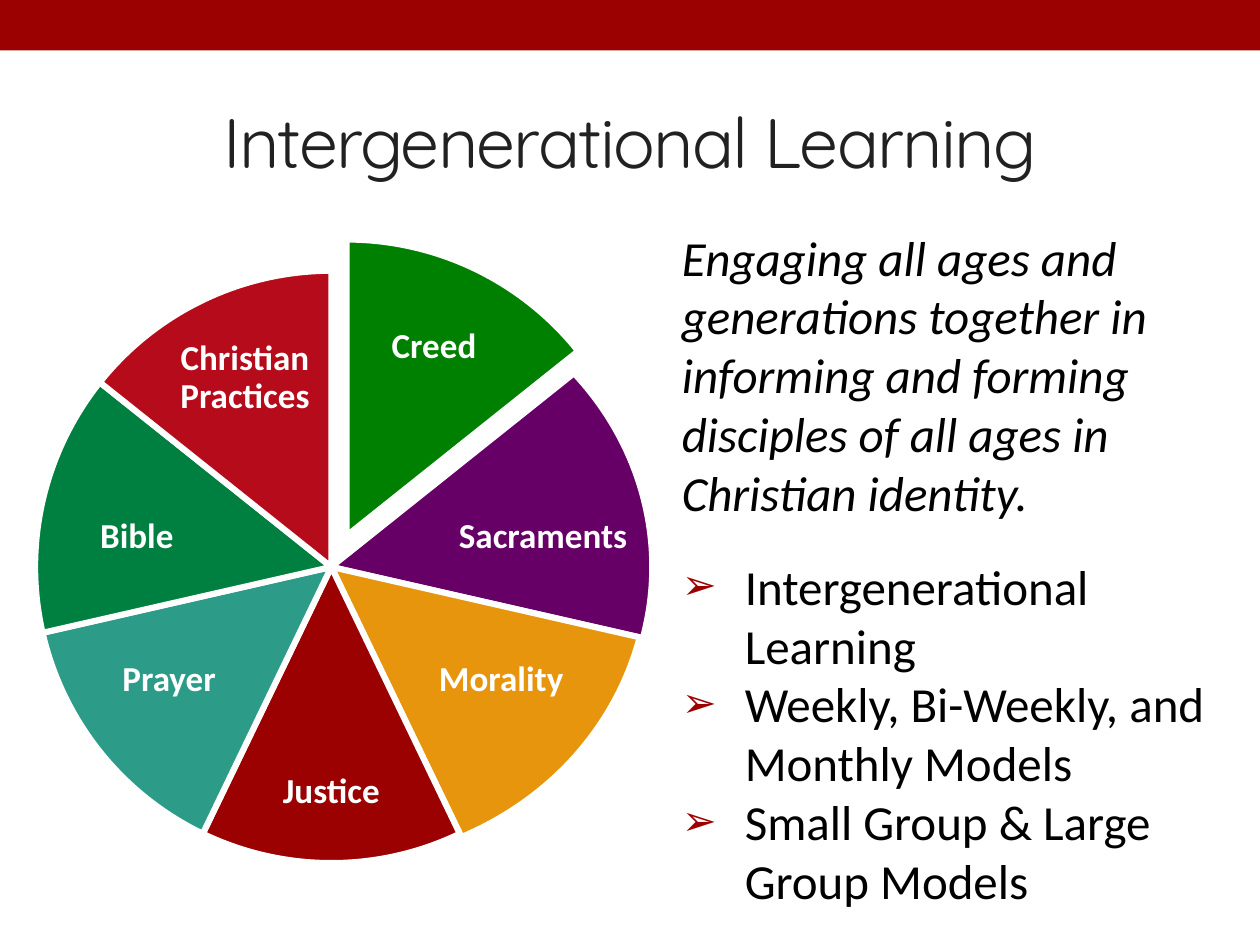
from dataclasses import dataclass

from lxml import etree
from pptx import Presentation
from pptx import util as u
from pptx.dml.color import RGBColor
from pptx.enum import shapes, text
from pptx.oxml.ns import qn


@dataclass(frozen=True)
class Theme:
    red: str = "9B0101"
    white: str = "FFFFFF"
    ink: str = "212121"
    black: str = "000000"
    head: str = "Quicksand"
    font: str = "Calibri"
    title: int = 40
    body: int = 28
    label: int = 20


@dataclass(frozen=True)
class Slice:
    name: str
    fill: str
    pie: tuple    # left, top, width, height in cm
    label: tuple  # left, top, width, height in cm


T = Theme()
DISC = (0.71, 5.46, 11.94, 11.94)

# Clockwise from twelve o'clock; the first slice is pulled out
SLICES = [
    Slice("Creed", "008000", (1.02, 4.83, 11.94, 11.94), (7.11, 5.97, 3.28, 2.06)),
    Slice("Sacraments", "660066", (0.2, 5.46, 12.95, 11.94), (9.07, 9.73, 3.76, 2.21)),
    Slice("Morality", "E8950E", (0.28, 5.46, 12.8, 11.94), (8.43, 12.57, 3.35, 2.29)),
    Slice("Justice", T.red, DISC, (5.08, 14.83, 3.2, 2.29)),
    Slice("Prayer", "2C9C89", DISC, (1.85, 12.57, 3.12, 2.29)),
    Slice("Bible", "008040", DISC, (1.02, 9.73, 3.48, 2.21)),
    Slice("Christian Practices", "B50B1B", DISC, (3.3, 6.6, 3.28, 2.06)),
]

INTRO = ("Engaging all ages and generations together in informing "
         "and forming disciples of all ages in Christian identity.")
POINTS = ["Intergenerational Learning", "Weekly, Bi-Weekly, and Monthly Models",
          "Small Group & Large Group Models"]


def box(at: tuple) -> list:
    return [u.Cm(n) for n in at]


def place(shape, at: tuple) -> None:
    shape.left, shape.top, shape.width, shape.height = box(at)


def write(para, words: str, *, size: int, color: str, font: str = T.font,
          bold: bool = False, italic: bool = False, align=text.PP_ALIGN.LEFT,
          line: float = 1.0, before: int = 0, track: int = 0):
    """Put one formatted run in a paragraph."""
    para.alignment, para.line_spacing = align, line
    para.space_before, para.space_after = u.Pt(before), u.Pt(0)
    run = para.add_run()
    run.text = words
    face = run.font
    face.name, face.size, face.bold, face.italic = font, u.Pt(size), bold, italic
    face.color.rgb = RGBColor.from_string(color)
    if track:
        run._r.get_or_add_rPr().set("spc", str(track))
    return para


def bullet(para, mark: str = "") -> None:
    """Give a paragraph a hanging red mark, or none at all."""
    props = para._p.get_or_add_pPr()
    indent = u.Cm(1.27) if mark else 0
    props.set("marL", str(indent))
    props.set("indent", str(-indent))
    if not mark:
        etree.SubElement(props, qn("a:buNone"))
        return
    tint = etree.SubElement(props, qn("a:buClr"))
    etree.SubElement(tint, qn("a:srgbClr"), val=T.red)
    etree.SubElement(props, qn("a:buSzPct"), val="85000")
    etree.SubElement(props, qn("a:buChar"), char=mark)


def solid(slide, kind, at: tuple, fill: str):
    shape = slide.shapes.add_shape(kind, *box(at))
    shape.shadow.inherit = False
    shape.fill.solid()
    shape.fill.fore_color.rgb = RGBColor.from_string(fill)
    shape.line.fill.background()
    return shape


def draw_slice(slide, item: Slice, start: float, end: float) -> None:
    """Draw one wedge between two angles in degrees, with its label."""
    wedge = solid(slide, shapes.MSO_SHAPE.PIE, item.pie, item.fill)
    # Angles are stored in 60000ths of a degree, adjustments in 100000ths
    wedge.adjustments[0] = start % 360 * 0.6
    wedge.adjustments[1] = end % 360 * 0.6
    wedge.line.color.rgb = RGBColor.from_string(T.white)
    wedge.line.width = u.Pt(3.5)

    frame = slide.shapes.add_textbox(*box(item.label)).text_frame
    frame.word_wrap = True
    frame.vertical_anchor = text.MSO_ANCHOR.MIDDLE
    frame.margin_left = frame.margin_right = u.Cm(0.08)
    frame.margin_top = frame.margin_bottom = u.Cm(0.08)
    write(frame.paragraphs[0], item.name, size=T.label, color=T.white,
          bold=True, align=text.PP_ALIGN.CENTER, line=0.9)


def main() -> None:
    deck = Presentation()
    deck.slide_width, deck.slide_height = u.Cm(25.4), u.Cm(19.05)
    slide = deck.slides.add_slide(deck.slide_layouts[1])
    title, body = slide.placeholders

    # Top band
    solid(slide, shapes.MSO_SHAPE.RECTANGLE, (0, 0, 25.4, 1.02), T.red)

    # Wheel of topics
    step = 360 / len(SLICES)
    for i, item in enumerate(SLICES):
        draw_slice(slide, item, i * step - 90, (i + 1) * step - 90)

    # Title
    place(title, (1.27, 1.47, 22.86, 2.74))
    title.text_frame.auto_size = text.MSO_AUTO_SIZE.NONE
    title.text_frame.vertical_anchor = text.MSO_ANCHOR.MIDDLE
    write(title.text_frame.paragraphs[0], "Intergenerational Learning",
          size=T.title, color=T.ink, font=T.head,
          align=text.PP_ALIGN.CENTER, track=-100)

    # Statement and list
    place(body, (13.49, 4.45, 11.15, 14.07))
    frame = body.text_frame
    frame.auto_size = text.MSO_AUTO_SIZE.NONE
    bullet(write(frame.paragraphs[0], INTRO, size=T.body, color=T.black, italic=True))
    for i, point in enumerate(POINTS):
        para = write(frame.add_paragraph(), point, size=T.body,
                     color=T.black, before=0 if i else 20)
        bullet(para, "➢")

    deck.save("out.pptx")


if __name__ == "__main__":
    main()
